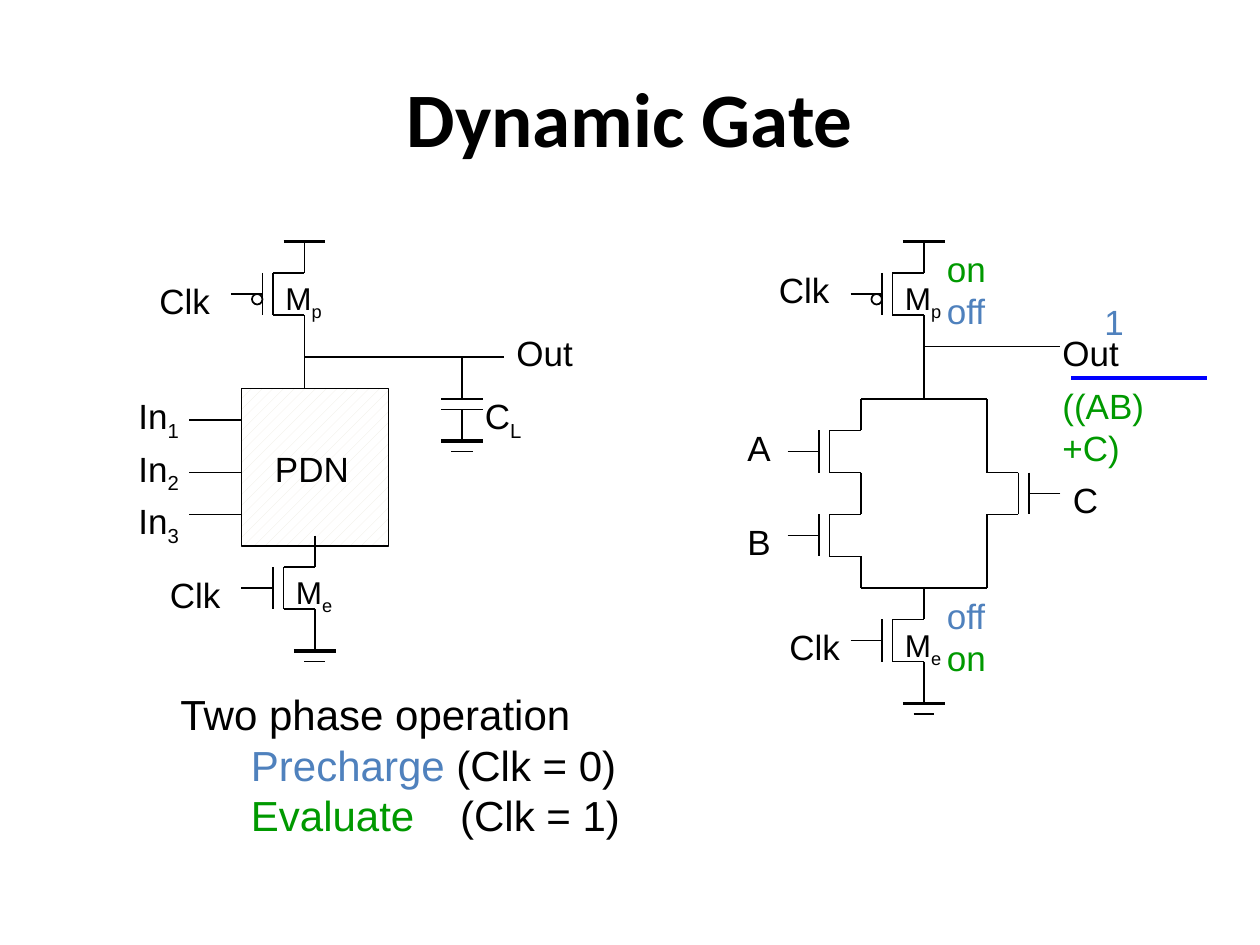
from dataclasses import dataclass

from lxml import etree
from pptx import Presentation
from pptx.dml.color import RGBColor
from pptx.enum.dml import MSO_PATTERN
from pptx.enum.shapes import MSO_CONNECTOR, MSO_SHAPE
from pptx.enum.text import MSO_ANCHOR, MSO_AUTO_SIZE, PP_ALIGN
from pptx.oxml.ns import qn
from pptx.util import Inches, Length, Pt

STRAIGHT = MSO_CONNECTOR.STRAIGHT
OVAL, RECTANGLE = MSO_SHAPE.OVAL, MSO_SHAPE.RECTANGLE
BLACK, BLUE, GREEN, BAR_BLUE = "000000", "4F81BD", "009900", "0000FF"
THIN, THICK = 1, 2.25
CELLS_PER_INCH = 12


@dataclass
class Label:
    """A text at a grid position, with an optional subscript."""
    text: str
    x: int
    y: int
    width: float
    sub: str = ""
    size: int = 20
    color: str = BLACK


LABELS = [
    *(Label("In", 12, 37 + 5 * i, 0.53, sub=str(i + 1)) for i in range(3)),
    Label("PDN", 25, 42, 0.79),
    Label("M", 27, 54, 0.5, sub="e", size=18),
    Label("M", 26, 26, 0.5, sub="p", size=18),
    Label("Clk", 15, 54, 0.6),
    Label("Clk", 14, 26, 0.6),
    Label("Out", 48, 31, 0.65),
    Label("C", 45, 37, 0.5, sub="L"),
    Label("Out", 100, 31, 0.65),
    Label("Clk", 73, 25, 0.6),
    Label("Clk", 74, 59, 0.6),
    Label("A", 70, 40, 0.39),
    Label("B", 70, 49, 0.39),
    Label("C", 101, 45, 0.4),
    Label("M", 85, 26, 0.5, sub="p", size=18),
    Label("M", 85, 59, 0.5, sub="e", size=18),
    Label("off", 89, 27, 0.51, color=BLUE),
    Label("off", 89, 56, 0.51, color=BLUE),
    Label("1", 104, 28, 0.36, color=BLUE),
    Label("on", 89, 23, 0.51, color=GREEN),
    Label("on", 89, 60, 0.51, color=GREEN),
    Label("((AB)+C)", 100, 36, 1.3, color=GREEN),
]

# Wires as x1, y1, x2, y2 in grid cells
LEFT_WIRES = [
    (29, 32, 29, 37), (18, 40, 23, 40), (18, 45, 23, 45), (18, 49, 23, 49),
    (29, 34, 48, 34), (44, 34, 44, 38), (42, 38, 46, 38), (42, 39, 46, 39),
]
RIGHT_WIRES = [
    (82, 38, 94, 38), (82, 56, 94, 56), (94, 38, 94, 42), (94, 52, 94, 56),
    (88, 32, 88, 38), (88, 33, 101, 33),
]


def grid(cells: float) -> Length:
    return Inches(cells / CELLS_PER_INCH)


def rgb(color: str) -> RGBColor:
    return RGBColor.from_string(color)


def add_wire(shapes, x1: int, y1: int, x2: int, y2: int,
             width: float = THIN, color: str = BLACK) -> None:
    wire = shapes.add_connector(STRAIGHT, grid(x1), grid(y1), grid(x2), grid(y2))
    wire.line.color.rgb = rgb(color)
    wire.line.width = Pt(width)
    etree.SubElement(wire._element.spPr, qn("a:effectLst"))


def add_outline(shapes, kind, x: int, y: int, width: int, height: int):
    shape = shapes.add_shape(kind, grid(x), grid(y), grid(width), grid(height))
    shape.shadow.inherit = False
    shape.fill.background()
    shape.line.color.rgb = rgb(BLACK)
    shape.line.width = Pt(THIN)
    return shape


def add_transistor(page, x: int, y: int, side: int = -1, pmos: bool = False) -> None:
    """Draw a transistor whose upper terminal bends at (x, y); side points to the gate."""
    shapes = page.shapes.add_group_shape().shapes
    channel, gate, lead = (x + side * step for step in (3, 4, 7))
    for wire in [
        (x, y - 3, x, y), (channel, y, x, y), (channel, y, channel, y + 4),
        (channel, y + 4, x, y + 4), (x, y + 4, x, y + 7),
        (gate, y, gate, y + 4), (lead, y + 2, gate, y + 2),
    ]:
        add_wire(shapes, *wire)
    if pmos:
        add_outline(shapes, OVAL, gate - 1, y + 2, 1, 1)


def add_supply(page, x: int, y: int) -> None:
    add_wire(page.shapes, x - 2, y, x + 2, y, THICK)


def add_ground(page, x: int, y: int) -> None:
    shapes = page.shapes.add_group_shape().shapes
    add_wire(shapes, x, y - 3, x, y)
    add_wire(shapes, x - 2, y, x + 2, y, THICK)
    add_wire(shapes, x - 1, y + 1, x + 1, y + 1)


def style_run(span, size: int, color: str, name: str = "Arial") -> None:
    span.font.name = name
    span.font.size = Pt(size)
    span.font.color.rgb = rgb(color)


def add_text_box(page, x: int, y: int, width: float, height: float):
    box = page.shapes.add_textbox(grid(x), grid(y), Inches(width), Inches(height))
    box.text_frame.word_wrap = False
    box.text_frame.auto_size = MSO_AUTO_SIZE.SHAPE_TO_FIT_TEXT
    return box.text_frame


def add_label(page, label: Label) -> None:
    height = 0.4 if label.size == 18 else 0.43
    frame = add_text_box(page, label.x, label.y, label.width, height)
    frame.text = label.text
    para = frame.paragraphs[0]
    if label.sub:
        span = para.add_run()
        span.text = label.sub
        span._r.get_or_add_rPr().set("baseline", "-25000")
    for span in para.runs:
        style_run(span, label.size, label.color)


def add_title(page, text: str) -> None:
    box = page.shapes.add_textbox(Inches(0.5), Inches(0.3), Inches(9), Inches(1.25))
    frame = box.text_frame
    frame.word_wrap = True
    frame.vertical_anchor = MSO_ANCHOR.MIDDLE
    frame.text = text
    para = frame.paragraphs[0]
    para.alignment = PP_ALIGN.CENTER
    style_run(para.runs[0], 44, BLACK, "Calibri")
    para.runs[0].font.bold = True


def add_phases(page) -> None:
    """List the two clock phases, aligned on tab stops."""
    lines = [
        [("Two phase operation", BLACK)],
        [("\tPrecharge", BLUE), (" (Clk = 0)", BLACK)],
        [("\tEvaluate", GREEN), ("\t(Clk = 1)", BLACK)],
    ]
    frame = add_text_box(page, 16, 65, 3.69, 1.3)
    for index, line in enumerate(lines):
        para = frame.add_paragraph() if index else frame.paragraphs[0]
        tabs = etree.SubElement(para._p.get_or_add_pPr(), qn("a:tabLst"))
        for stop in (0.56, 2.22):
            etree.SubElement(tabs, qn("a:tab"), pos=str(Inches(stop)), algn="l")
        for text, color in line:
            span = para.add_run()
            span.text = text
            style_run(span, 24, color)


def main() -> None:
    deck = Presentation()
    deck.slide_width, deck.slide_height = Inches(10), Inches(7.5)
    page = deck.slides.add_slide(deck.slide_layouts[6])
    add_title(page, "Dynamic Gate")

    network = add_outline(page.shapes, RECTANGLE, 23, 37, 14, 15)
    network.fill.patterned()
    network.fill.pattern = MSO_PATTERN.PERCENT_20
    network.fill.fore_color.rgb = rgb("EEECE1")
    network.fill.back_color.rgb = rgb("FFFFFF")

    for x in (29, 88):
        add_supply(page, x, 23)
        add_transistor(page, x, 26, pmos=True)
    for x, y in [(30, 54), (82, 41), (82, 49), (88, 59)]:
        add_transistor(page, x, y)
    add_transistor(page, 94, 45, side=1)
    for x, y in [(30, 62), (44, 42), (88, 67)]:
        add_ground(page, x, y)
    for wire in LEFT_WIRES + RIGHT_WIRES:
        add_wire(page.shapes, *wire)

    for label in LABELS:
        add_label(page, label)
    add_wire(page.shapes, 102, 36, 115, 36, THICK, BAR_BLUE)
    add_phases(page)
    deck.save("out.pptx")


if __name__ == "__main__":
    main()
